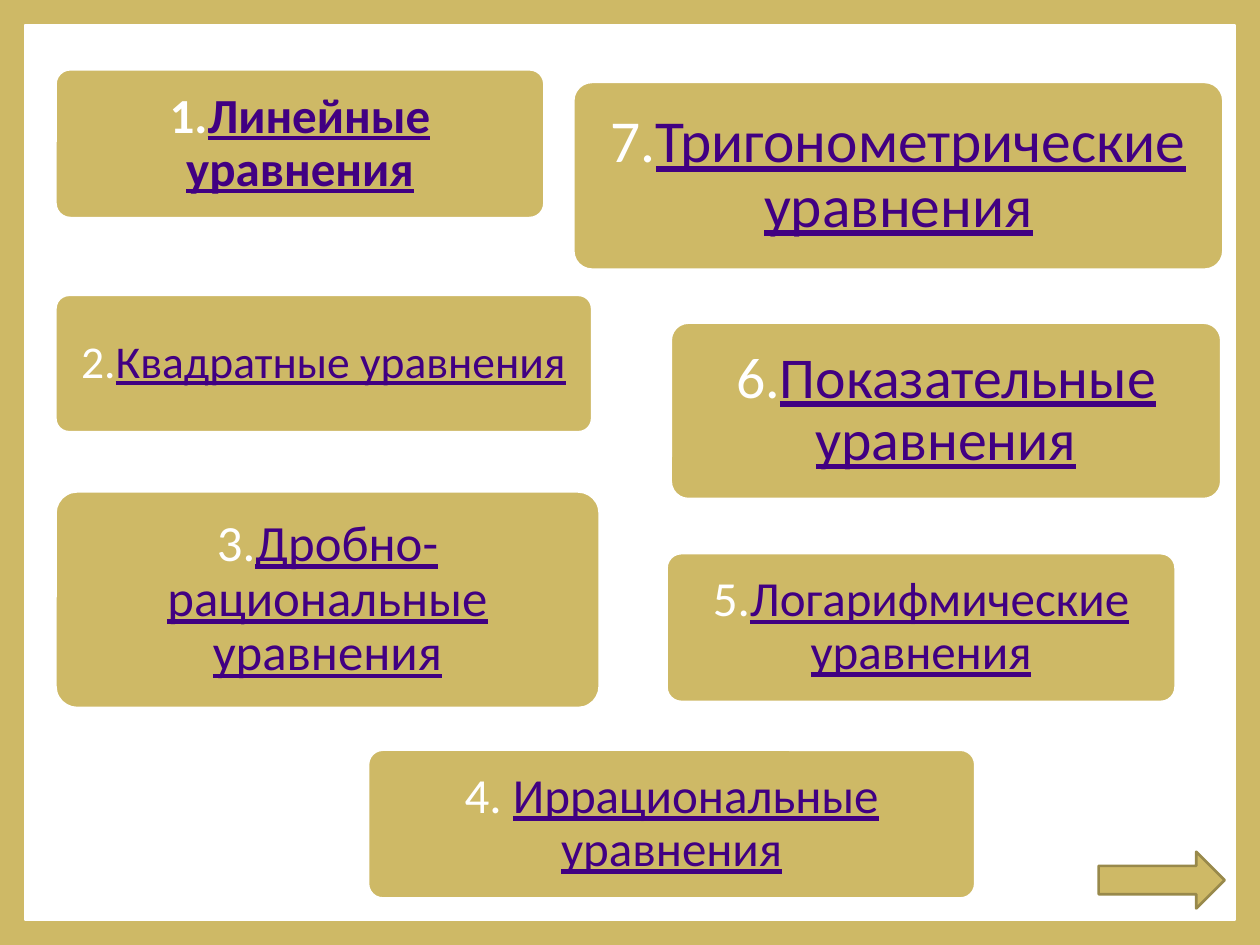
from dataclasses import dataclass

from pptx import Presentation
from pptx.dml.color import RGBColor
from pptx.enum.shapes import MSO_SHAPE
from pptx.enum.text import MSO_ANCHOR, PP_ALIGN
from pptx.util import Pt


@dataclass(frozen=True)
class Theme:
    """Colours, type sizes and line widths of the slide."""

    gold: RGBColor = RGBColor(0xCE, 0xB9, 0x66)
    dark_gold: RGBColor = RGBColor(0x98, 0x89, 0x4B)
    white: RGBColor = RGBColor(0xFF, 0xFF, 0xFF)
    link: RGBColor = RGBColor(0x41, 0x00, 0x82)
    font: str = "Calibri"
    small: int = 26
    medium: int = 28
    large: int = 29
    huge: int = 33
    giant: int = 34
    thin: float = 1
    outline: float = 1.5
    inset_ratio: float = 0.38


THEME = Theme()

TOPICS = [
    ("2.", "Квадратные уравнения", (31.7, 168.5, 306.7, 78.5), THEME.small, False),
    ("1.", "Линейные уравнения", (31.7, 39.6, 279.4, 85), THEME.medium, True),
    ("7.", "Тригонометрические уравнения", (327.6, 46.8, 371.5, 107.3), THEME.giant, False),
    ("5.", "Логарифмические уравнения", (380.9, 316.1, 290.9, 85), THEME.medium, False),
    ("4. ", "Иррациональные уравнения", (210.3, 428.4, 347, 85), THEME.medium, False),
    ("6.", "Показательные уравнения", (383.3, 184.4, 314.6, 100.8), THEME.huge, False),
    ("3.", "Дробно-рациональные уравнения", (31.7, 280.8, 311, 123.8), THEME.large, False),
]


def add_box(page, preset, bounds, fill, line, width):
    """Add a flat preset shape with the given fill and outline."""
    box = page.shapes.add_shape(preset, *(Pt(length) for length in bounds))
    box.shadow.inherit = False
    box.fill.solid()
    box.fill.fore_color.rgb = fill
    box.line.color.rgb = line
    box.line.width = Pt(width)
    return box


def add_topic(page, number, name, bounds, size, bold):
    """Add a rounded box holding a number and an underlined topic name."""
    box = add_box(page, MSO_SHAPE.ROUNDED_RECTANGLE, bounds, THEME.gold, THEME.white, THEME.outline)
    box.adjustments[0] = 0.1
    frame = box.text_frame
    frame.word_wrap = True
    frame.vertical_anchor = MSO_ANCHOR.MIDDLE
    inset = Pt(size * THEME.inset_ratio)
    frame.margin_left = frame.margin_right = inset
    frame.margin_top = frame.margin_bottom = inset
    para = frame.paragraphs[0]
    para.alignment = PP_ALIGN.CENTER
    para.line_spacing = 0.9
    para.font.name = THEME.font
    para.font.size = Pt(size)
    para.font.bold = bold
    for text, color, underlined in ((number, THEME.white, False), (name, THEME.link, True)):
        span = para.add_run()
        span.text = text
        span.font.color.rgb = color
        span.font.underline = underlined


def main():
    """Build the slide of equation topics and save it."""
    deck = Presentation()
    deck.slide_width, deck.slide_height = Pt(720), Pt(540)
    page = deck.slides.add_slide(deck.slide_layouts[6])
    page.background.fill.solid()
    page.background.fill.fore_color.rgb = THEME.gold
    add_box(page, MSO_SHAPE.RECTANGLE, (14.4, 14.4, 691.2, 511.2), THEME.white, THEME.white, THEME.thin)
    for topic in TOPICS:
        add_topic(page, *topic)
    add_box(page, MSO_SHAPE.RIGHT_ARROW, (627.8, 486.7, 72, 32.4), THEME.gold, THEME.dark_gold, THEME.outline)
    deck.save("out.pptx")


if __name__ == "__main__":
    main()
